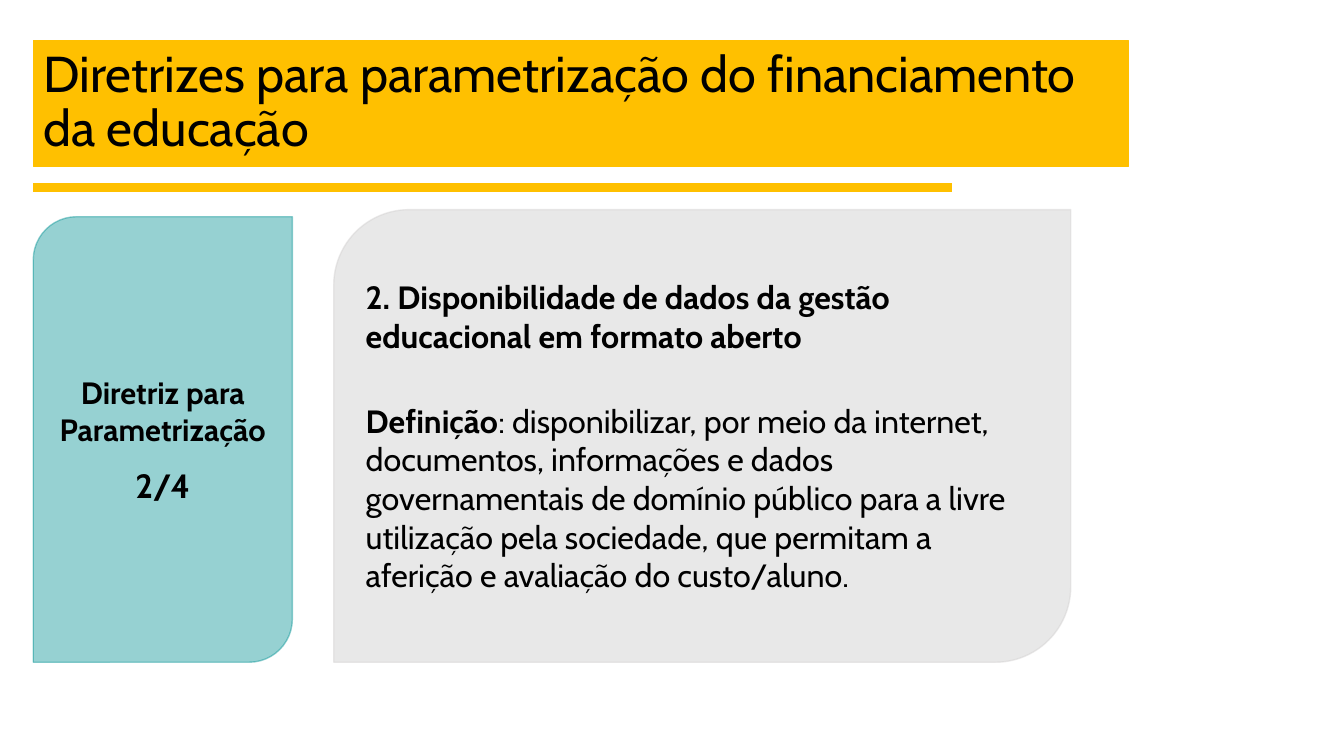
"""Build a slide on guidelines for education funding."""
from lxml import etree
from pptx import Presentation
from pptx.dml.color import RGBColor
from pptx.enum.shapes import MSO_CONNECTOR, MSO_SHAPE
from pptx.enum.text import MSO_ANCHOR, MSO_AUTO_SIZE, PP_ALIGN
from pptx.oxml.ns import qn
from pptx.util import Inches, Pt

FONT = "Cabin"
AMBER = RGBColor(0xFF, 0xC0, 0x00)
TEAL = RGBColor(0x00, 0x91, 0x93)
GREY = RGBColor(0xC9, 0xC9, 0xC9)
EDGE_GREY = RGBColor(0xD0, 0xCE, 0xCE)
BLACK = RGBColor(0x00, 0x00, 0x00)
LEFT = 0.33
OPACITY = 41


def add_text(p, text, size, bold=False, align=PP_ALIGN.LEFT, before=0, spacing=1.0):
    p.alignment = align
    p.space_before = Pt(before)
    p.space_after = Pt(0)
    p.line_spacing = spacing
    r = p.add_run()
    r.text = text
    r.font.name = FONT
    r.font.size = Pt(size)
    r.font.bold = bold
    r.font.color.rgb = BLACK


def paint(sp, fill, edge, width):
    sp.fill.solid()
    sp.fill.fore_color.rgb = fill
    sp.line.color.rgb = edge
    sp.line.width = Pt(width)


def prepare_frame(sp):
    tf = sp.text_frame
    tf.word_wrap = True
    tf.auto_size = MSO_AUTO_SIZE.NONE
    tf.vertical_anchor = MSO_ANCHOR.MIDDLE
    return tf


def add_title(s, text):
    sp = s.shapes.title
    sp.left, sp.top = Inches(LEFT), Inches(0.4)
    sp.width, sp.height = Inches(10.86), Inches(1.25)
    paint(sp, AMBER, AMBER, 0.75)
    add_text(prepare_frame(sp).paragraphs[0], text, 36, spacing=0.9)


def add_rule(s, x1, x2, y):
    line = s.shapes.add_connector(
        MSO_CONNECTOR.STRAIGHT, Inches(x1), Inches(y), Inches(x2), Inches(y))
    line.line.color.rgb = AMBER
    line.line.width = Pt(6)
    etree.SubElement(line._element.spPr, qn("a:effectLst"))


def add_panel(s, x, y, w, h, fill, edge):
    sp = s.shapes.add_shape(
        MSO_SHAPE.ROUND_2_DIAG_RECTANGLE, Inches(x), Inches(y), Inches(w), Inches(h))
    sp.shadow.inherit = False
    paint(sp, fill, edge, 1)
    for color in sp._element.spPr.iter(qn("a:srgbClr")):
        etree.SubElement(color, qn("a:alpha"), val=str(OPACITY * 1000))
    return prepare_frame(sp)


def main():
    prs = Presentation()
    prs.slide_width, prs.slide_height = Inches(13.33), Inches(7.5)
    s = prs.slides.add_slide(prs.slide_layouts[5])

    add_title(s, "Diretrizes para parametrização do financiamento da educação")
    add_rule(s, LEFT, 9.44, 1.86)

    tf = add_panel(s, LEFT, 2.15, 2.57, 4.42, TEAL, TEAL)
    add_text(tf.paragraphs[0], "Diretriz para Parametrização", 22, bold=True,
             align=PP_ALIGN.CENTER)
    add_text(tf.add_paragraph(), "2/4", 24, bold=True, align=PP_ALIGN.CENTER, before=12)

    tf = add_panel(s, 3.31, 2.08, 7.31, 4.49, GREY, EDGE_GREY)
    add_text(tf.paragraphs[0],
             "2. Disponibilidade de dados da gestão educacional em formato aberto",
             23, bold=True)
    p = tf.add_paragraph()
    add_text(p, "Definição", 23, bold=True, before=33)
    add_text(p, ": disponibilizar, por meio da internet, documentos, informações e dados "
             "governamentais de domínio público para a livre utilização pela sociedade, "
             "que permitam a aferição e avaliação do custo/aluno.", 23, before=33)

    prs.save("out.pptx")


if __name__ == "__main__":
    main()
